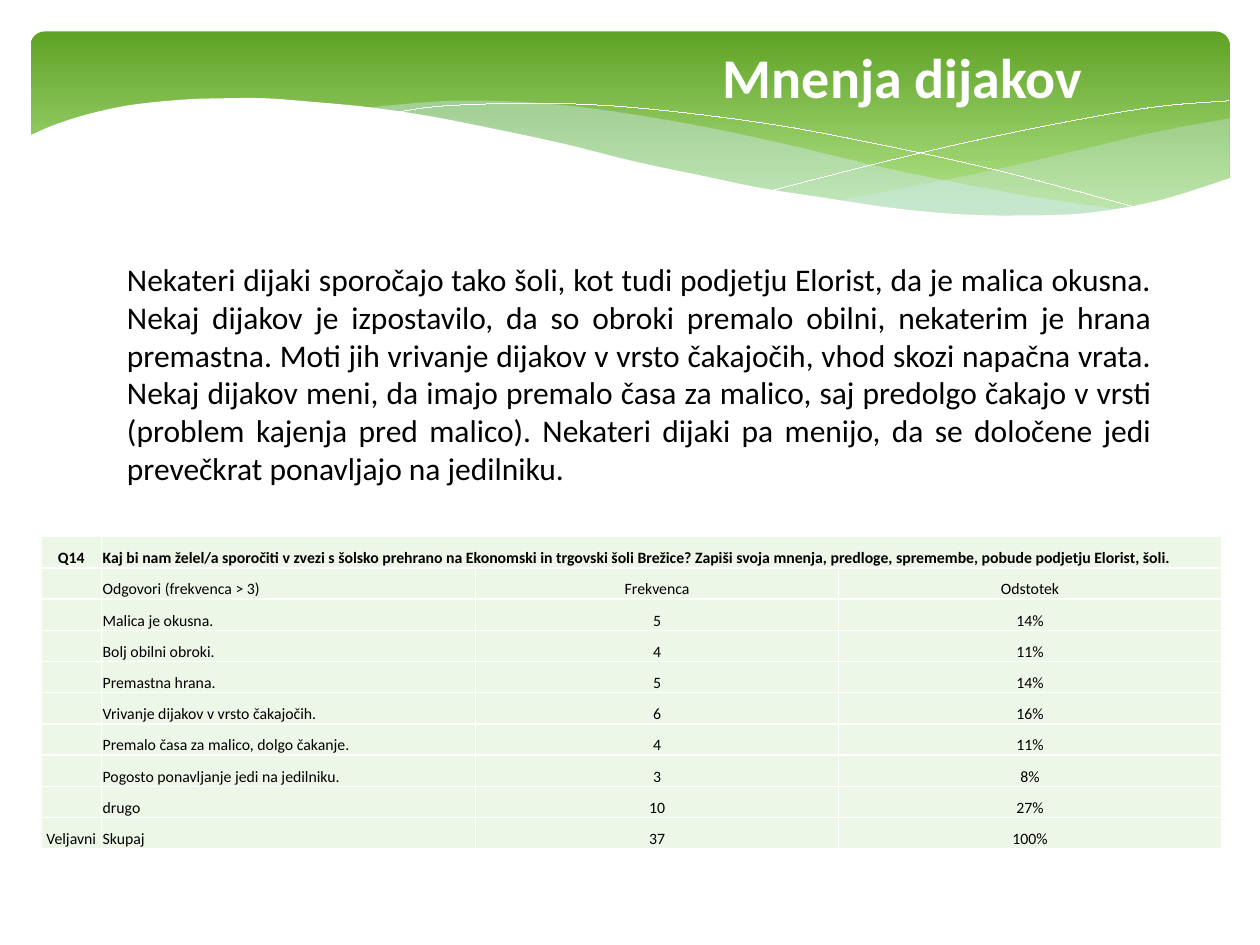
from dataclasses import dataclass

from lxml import etree
from pptx import Presentation
from pptx import util as u
from pptx.dml.color import RGBColor
from pptx.enum import shapes, text
from pptx.oxml import ns


@dataclass(frozen=True)
class Theme:
    font: str = "Calibri"
    title_size: int = 32
    body_size: int = 18
    table_size: int = 9
    ink: str = "000000"
    white: str = "FFFFFF"
    cell: str = "ECF7E8"
    band_top: str = "5FA326"
    band_bottom: str = "B2E389"
    haze: str = "D6ECFF"


THEME = Theme()
COLUMNS, ROWS = 100, 75
UNIT = u.Inches(10) // COLUMNS  # side of one square grid cell
HAIRLINE = u.Emu(1)

BODY = (
    "Nekateri dijaki sporočajo tako šoli, kot tudi podjetju Elorist, da je malica okusna. "
    "Nekaj dijakov je izpostavilo, da so obroki premalo obilni, nekaterim je hrana premastna. "
    "Moti jih vrivanje dijakov v vrsto čakajočih, vhod skozi napačna vrata. Nekaj dijakov meni, "
    "da imajo premalo časa za malico, saj predolgo čakajo v vrsti (problem kajenja pred malico). "
    "Nekateri dijaki pa menijo, da se določene jedi prevečkrat ponavljajo na jedilniku."
)
QUESTION = (
    "Kaj bi nam želel/a sporočiti v zvezi s šolsko prehrano na Ekonomski in trgovski šoli Brežice? "
    "Zapiši svoja mnenja, predloge, spremembe, pobude podjetju Elorist, šoli."
)
ANSWERS = [
    ("Q14", QUESTION, "", ""),
    ("", "Odgovori (frekvenca > 3)", "Frekvenca", "Odstotek"),
    ("", "Malica je okusna.", "5", "14%"),
    ("", "Bolj obilni obroki.", "4", "11%"),
    ("", "Premastna hrana.", "5", "14%"),
    ("", "Vrivanje dijakov v vrsto čakajočih.", "6", "16%"),
    ("", "Premalo časa za malico, dolgo čakanje.", "4", "11%"),
    ("", "Pogosto ponavljanje jedi na jedilniku.", "3", "8%"),
    ("", "drugo", "10", "27%"),
    ("Veljavni", "Skupaj", "37", "100%"),
]
COLUMN_WIDTHS = (4.8, 29.7, 28.8, 30.4)

# Waves: each is a list of curves, joined end to end, in grid units.
RIGHT_HAZE = [
    [(97.6, 9.4), (92.1, 10.4), (86.1, 11.8), (77.9, 13.7), (66.1, 16)],
    [(66.1, 16), (73.2, 16.8), (79.2, 17.2), (85.4, 17.1), (91.3, 16.2), (97.6, 14.1)],
]
LEFT_HAZE = [
    [(89.3, 16.7), (80.7, 15.4), (70.6, 13.4), (61.3, 11.2), (52.8, 9.5),
     (44.2, 8.3), (36.1, 8), (28.6, 8.6)],
    [(28.6, 8.6), (36.2, 9.7), (44.9, 11.6), (56.6, 14.3), (66.5, 16.1),
     (76.1, 17.1), (82.8, 17.3), (89.3, 16.7)],
]
FALLING_LINE = [[(30.9, 9), (35.3, 8.4), (43.3, 8.2), (51, 8.6), (60.8, 9.8),
                 (69.5, 11.4), (79.5, 13.6), (90.7, 16.6)]]
RISING_LINE = [[(61.3, 15.1), (69.5, 13), (77.6, 11.1), (86.6, 9.3), (92.4, 8.4), (97.5, 8)]]
PAGE_EDGE = [
    [(97.7, 14.1), (92, 15.9), (86.3, 16.9), (80.9, 17.1), (76.1, 17), (70.8, 16.5),
     (64.8, 15.6), (60.3, 14.9), (55.5, 13.9), (50.3, 12.8), (44.7, 11.4), (39.1, 10.2),
     (34, 9.2), (29.2, 8.5), (25, 8.1), (21.1, 7.8), (17.7, 7.8), (14.6, 7.9), (10.6, 8.3),
     (7.6, 8.9), (5.2, 9.6), (3.6, 10.2), (2.3, 10.8)],
    [(2.3, 22.4), (97.7, 22.4)],
]


def rgb(color):
    return RGBColor.from_string(color)


def grid(*values):
    return [round(value * UNIT) for value in values]


def smooth(points, steps=8):
    """Sample a Catmull-Rom curve that passes through the points."""
    padded = [points[0], *points, points[-1]]
    curve = [points[0]]
    for a, b, c, d in zip(padded, padded[1:], padded[2:], padded[3:]):
        for t in (step / steps for step in range(1, steps + 1)):
            curve.append(tuple(
                b[i] + (c[i] - a[i]) * t / 2
                + (2 * a[i] - 5 * b[i] + 4 * c[i] - d[i]) * t ** 2 / 2
                + (3 * b[i] - a[i] - 3 * c[i] + d[i]) * t ** 3 / 2
                for i in (0, 1)))
    return curve


def add_wave(page, curves, fill=None, opacity=100):
    """Draw a closed filled wave, or an open white hairline when fill is None."""
    points = [grid(*point) for curve in curves for point in smooth(curve)]
    builder = page.shapes.build_freeform(*points[0])
    builder.add_line_segments(points[1:], close=fill is not None)
    wave = builder.convert_to_shape()
    wave.shadow.inherit = False
    if fill is None:
        wave.fill.background()
        wave.line.color.rgb = rgb(THEME.white)
        wave.line.width = HAIRLINE
        return
    wave.line.fill.background()
    wave.fill.solid()
    wave.fill.fore_color.rgb = rgb(fill)
    if opacity < 100:
        color = wave.fill._xPr.find(".//" + ns.qn("a:srgbClr"))
        etree.SubElement(color, ns.qn("a:alpha"), val=str(opacity * 1000))


def add_band(page):
    band = page.shapes.add_shape(
        shapes.MSO_SHAPE.ROUNDED_RECTANGLE, *grid(2.45, 2.5, 95.15, 15.6))
    band.adjustments[0] = 0.07
    band.shadow.inherit = False
    band.line.fill.background()
    band.fill.gradient()
    band.fill.gradient_angle = 270
    stops = ((0, THEME.band_top), (0.9, THEME.band_bottom))
    for stop, (position, color) in zip(band.fill.gradient_stops, stops):
        stop.position = position
        stop.color.rgb = rgb(color)


def write(frame, words, size, color=THEME.ink, bold=False, align=text.PP_ALIGN.LEFT):
    para = frame.paragraphs[0]
    para.alignment = align
    if not words:
        para._p.get_or_add_endParaRPr().set("sz", str(size * 100))
        return
    span = para.add_run()
    span.text = words
    span.font.name = THEME.font
    span.font.size = u.Pt(size)
    span.font.bold = bold
    span.font.color.rgb = rgb(color)


def add_title(page, words):
    title = page.shapes.title
    title.left, title.top, title.width, title.height = grid(44.5, 2.9, 54.3, 8.7)
    page.shapes._spTree.append(title._element)  # bring in front of the band
    title.text_frame.vertical_anchor = text.MSO_ANCHOR.TOP
    write(title.text_frame, words, THEME.title_size, color=THEME.white, bold=True,
          align=text.PP_ALIGN.CENTER)


def add_body(page, words):
    box = page.shapes.add_textbox(*grid(9.1, 20.15, 83.3, 19.2))
    box.text_frame.word_wrap = True
    write(box.text_frame, words, THEME.body_size, align=text.PP_ALIGN.JUSTIFY)


def format_cell(cell):
    cell.vertical_anchor = text.MSO_ANCHOR.BOTTOM
    cell.margin_left = cell.margin_right = cell.margin_top = u.Inches(0.01)
    cell.margin_bottom = 0
    properties = cell._tc.get_or_add_tcPr()
    for side in ("lnL", "lnR", "lnT", "lnB"):
        line = etree.SubElement(properties, ns.qn("a:" + side), w=str(u.Pt(1)))
        fill = etree.SubElement(line, ns.qn("a:solidFill"))
        etree.SubElement(fill, ns.qn("a:srgbClr"), val=THEME.white)
    cell.fill.solid()
    cell.fill.fore_color.rgb = rgb(THEME.cell)


def add_answers(page):
    table = page.shapes.add_table(
        len(ANSWERS), len(COLUMN_WIDTHS), *grid(3.25, 42.6, 93.7, 24.8)).table
    table.first_row = table.horz_banding = False
    for column, width in zip(table.columns, grid(*COLUMN_WIDTHS)):
        column.width = width
    for i, answer in enumerate(ANSWERS):
        for j, words in enumerate(answer):
            cell = table.cell(i, j)
            format_cell(cell)
            align = text.PP_ALIGN.LEFT if j == 1 else text.PP_ALIGN.CENTER
            write(cell.text_frame, words, THEME.table_size, bold=i == 0, align=align)
    table.cell(0, 1).merge(table.cell(0, 3))


def main():
    deck = Presentation()
    deck.slide_width, deck.slide_height = COLUMNS * UNIT, ROWS * UNIT
    page = deck.slides.add_slide(deck.slide_layouts.get_by_name("Title Only"))
    add_band(page)
    add_wave(page, RIGHT_HAZE, fill=THEME.haze, opacity=29)
    add_wave(page, LEFT_HAZE, fill=THEME.haze, opacity=40)
    add_wave(page, FALLING_LINE)
    add_wave(page, RISING_LINE)
    add_wave(page, PAGE_EDGE, fill=THEME.white)
    add_answers(page)
    add_title(page, "Mnenja dijakov")
    add_body(page, BODY)
    deck.save("out.pptx")


if __name__ == "__main__":
    main()
